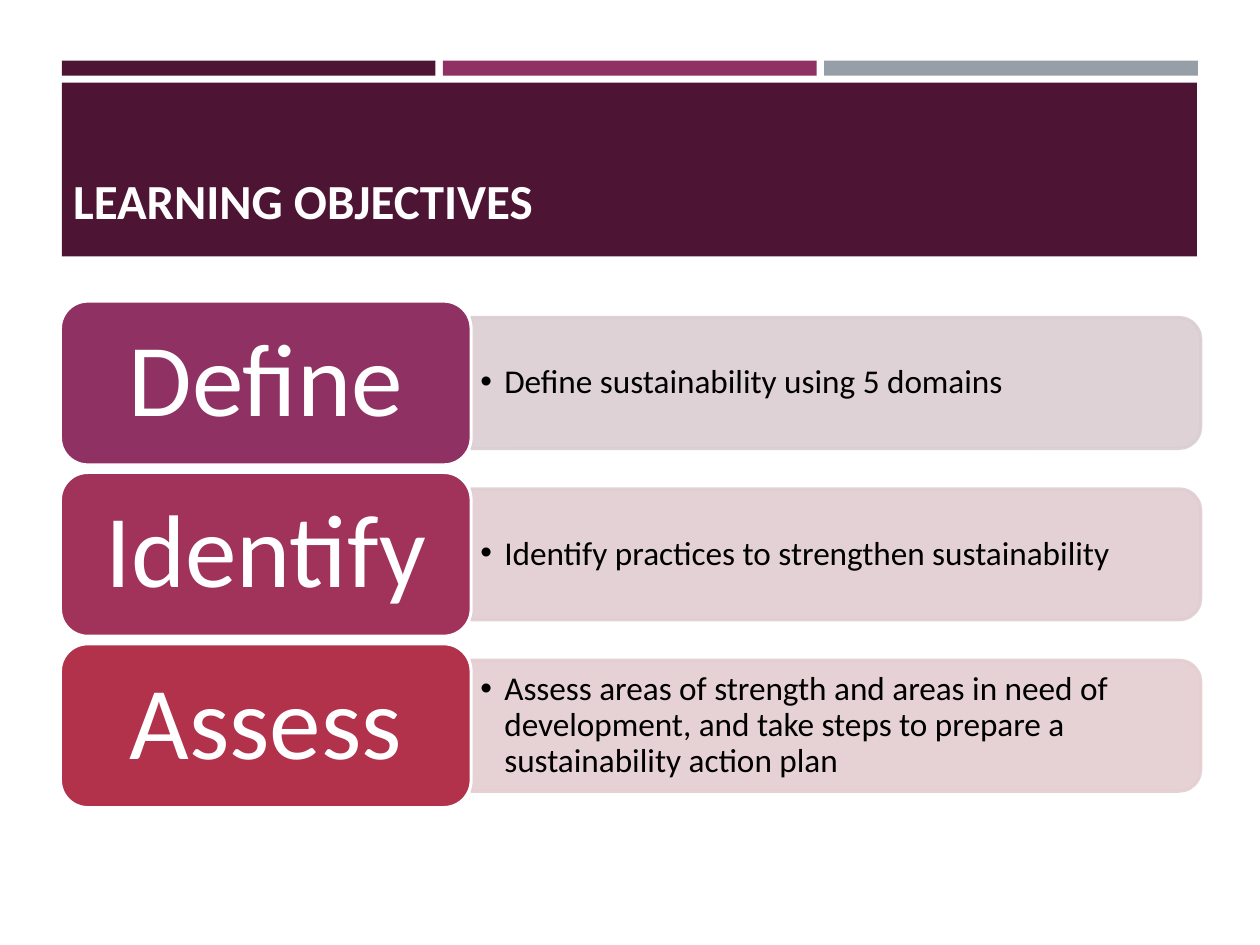
from dataclasses import dataclass

from lxml.etree import SubElement
from pptx import Presentation
from pptx.dml.color import RGBColor
from pptx.enum.shapes import MSO_SHAPE as Kind
from pptx.enum.text import MSO_ANCHOR as Anchor, MSO_AUTO_SIZE as Fit, PP_ALIGN as Align
from pptx.oxml.ns import qn
from pptx.util import Pt

HUES = {
    "plum": "4D1434",
    "grape": "903163",
    "slate": "969FA7",
    "rose": "A1325A",
    "red": "B2324B",
    "mauve": "DBCED3",
    "pink": "E0CDD2",
    "blush": "E4CED0",
    "snow": "FFFEFF",
    "white": "FFFFFF",
    "black": "000000",
}
FACE = "Calibri"
LEFT, TOP, PITCH = 34.56, 172.08, 97.92
TAG_W, TAG_H = 234.72, 93.6
PANE_W, PANE_H = 416.88, 74.88


@dataclass
class Box:
    x: float
    y: float
    w: float
    h: float

    def pts(self) -> tuple:
        return Pt(self.x), Pt(self.y), Pt(self.w), Pt(self.h)


@dataclass
class Goal:
    name: str
    text: str
    dark: str
    pale: str


GOALS = [
    Goal("Define", "Define sustainability using 5 domains", "grape", "mauve"),
    Goal("Identify", "Identify practices to strengthen sustainability", "rose", "pink"),
    Goal("Assess", "Assess areas of strength and areas in need of development, "
         "and take steps to prepare a sustainability action plan", "red", "blush"),
]


def tint(name: str) -> RGBColor:
    return RGBColor.from_string(HUES[name])


def block(slide, kind, box: Box, fill: str, edge: str = ""):
    shape = slide.shapes.add_shape(kind, *box.pts())
    shape.shadow.inherit = False
    shape.fill.solid()
    shape.fill.fore_color.rgb = tint(fill)
    if edge:
        shape.line.color.rgb = tint(edge)
        shape.line.width = Pt(1.75)
    else:
        shape.line.fill.background()
    return shape


def style(para, size: float, hue: str, bold: bool = False) -> None:
    font = para.font
    font.name, font.size, font.bold = FACE, Pt(size), bold
    font.color.rgb = tint(hue)


def label(slide, box: Box, text: str, size: float, hue: str, pad: tuple):
    frame = slide.shapes.add_textbox(*box.pts()).text_frame
    frame.word_wrap = True
    frame.vertical_anchor = Anchor.MIDDLE
    frame.margin_left = frame.margin_right = Pt(pad[0])
    frame.margin_top = frame.margin_bottom = Pt(pad[1])
    para = frame.paragraphs[0]
    para.text = text
    para.line_spacing = 0.9
    style(para, size, hue)
    return para


def fade(shape) -> None:
    for tone in shape.element.spPr.iter(qn("a:srgbClr")):
        SubElement(tone, qn("a:alpha"), val="90000")


def bullet(para) -> None:
    para.level = 1
    props = para._p.get_or_add_pPr()
    props.set("marL", str(Pt(13.68)))
    props.set("indent", str(Pt(-13.68)))
    SubElement(props, qn("a:buFont"), typeface="Arial")
    SubElement(props, qn("a:buChar"), char="•")
    props.append(props.find(qn("a:defRPr")))


def header(slide) -> None:
    title = slide.shapes.title
    bars = [block(slide, Kind.RECTANGLE, Box(35.28 + 217.8 * i, 34.7, 213.6, 8.6), hue)
            for i, hue in enumerate(("plum", "grape", "slate"))]
    bars.append(block(slide, Kind.RECTANGLE, Box(35.28, 47.3, 648.72, 99.2), "plum"))
    for bar in bars:
        title.element.addprevious(bar.element)
    title.left, title.top, title.width, title.height = Box(LEFT, 55.44, 651.6, 79.92).pts()
    frame = title.text_frame
    frame.text = "LEARNING OBJECTIVES"
    frame.auto_size = Fit.NONE
    frame.vertical_anchor = Anchor.BOTTOM
    para = frame.paragraphs[0]
    para.alignment = Align.LEFT
    para.line_spacing = 0.9
    style(para, 28, "snow", True)


def row(slide, goal: Goal, y: float) -> None:
    mid = y + TAG_H / 2
    edge = LEFT + TAG_W
    turn = (PANE_W - PANE_H) / 2
    pane = block(slide, Kind.ROUND_2_SAME_RECTANGLE,
                 Box(edge + turn, mid - PANE_W / 2, PANE_H, PANE_W), goal.pale, goal.pale)
    pane.rotation = 90
    fade(pane)
    bullet(label(slide, Box(edge - 0.5, mid - 33.84, 413.28, 67.68), goal.text, 19, "black", (5.76, 2.88)))
    block(slide, Kind.ROUNDED_RECTANGLE, Box(LEFT, y, TAG_W, TAG_H), goal.dark, "white")
    para = label(slide, Box(LEFT + 4.6, y + 4.6, TAG_W - 9.2, TAG_H - 9.2), goal.name, 59, "white", (18, 8.64))
    para.alignment = Align.CENTER


def main() -> None:
    deck = Presentation()
    deck.slide_width, deck.slide_height = Pt(720), Pt(540)
    slide = deck.slides.add_slide(deck.slide_layouts[5])
    header(slide)
    for i, goal in enumerate(GOALS):
        row(slide, goal, TOP + PITCH * i)
    deck.save("out.pptx")


if __name__ == "__main__":
    main()
